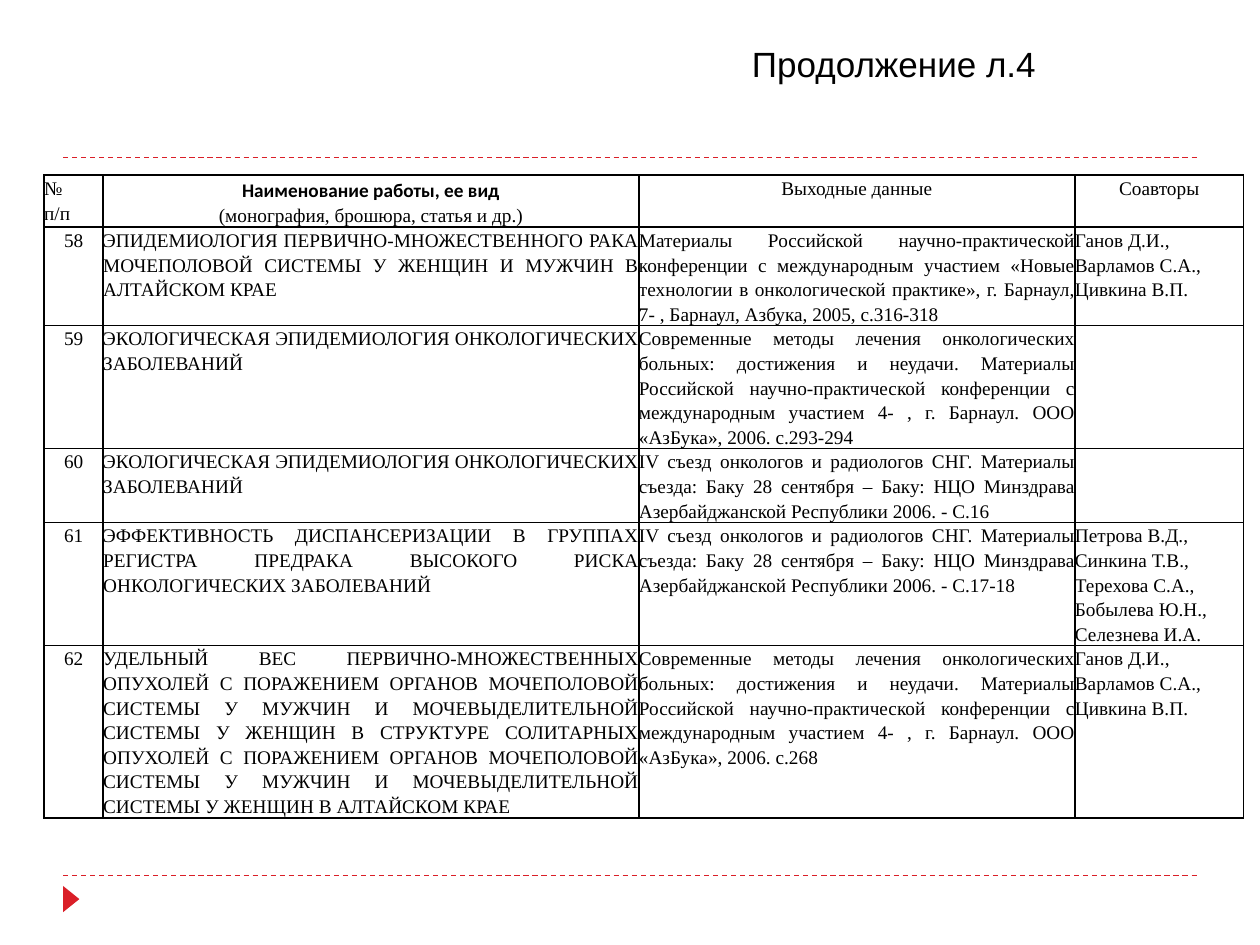
from dataclasses import dataclass
from typing import Any

import lxml.etree
import pptx
import pptx.dml.color
import pptx.enum.dml
import pptx.enum.shapes
import pptx.enum.text
import pptx.oxml.ns
import pptx.util

Cm = pptx.util.Cm
Pt = pptx.util.Pt
Align = pptx.enum.text.PP_ALIGN
qn = pptx.oxml.ns.qn

BLACK = pptx.dml.color.RGBColor(0x00, 0x00, 0x00)
RED = pptx.dml.color.RGBColor(0xDA, 0x1F, 0x28)

SERIF = {"name": "Times New Roman", "size": Pt(11), "bold": False}
STRONG = {"name": "Calibri", "size": Pt(11), "bold": True}
HEADING = {"name": "Arial", "size": Pt(20), "bold": False}
NO_MARGINS = {f"margin_{side}": 0 for side in ("left", "right", "top", "bottom")}
PLAIN_TABLE = {"first_row": False, "horz_banding": False}

COLUMN_WIDTHS = (1.19, 10.8, 8.79, 3.4)
HEADER_HEIGHT = 1.03
HEADER_ALIGNS = (Align.LEFT, Align.CENTER, Align.CENTER, Align.CENTER)
BODY_ALIGNS = (Align.CENTER, Align.JUSTIFY, Align.JUSTIFY, Align.LEFT)
HEADERS = (
    "№\nп/п",
    "Наименование работы, ее вид\n(монография, брошюра, статья и др.)",
    "Выходные данные",
    "Соавторы",
)

ECOLOGY = "ЭКОЛОГИЧЕСКАЯ ЭПИДЕМИОЛОГИЯ ОНКОЛОГИЧЕСКИХ ЗАБОЛЕВАНИЙ"
CONGRESS = (
    "IV съезд онкологов и радиологов СНГ. Материалы съезда: Баку 28 сентября – "
    "Баку: НЦО Минздрава Азербайджанской Республики 2006. - "
)
METHODS = (
    "Современные методы лечения онкологических больных: достижения и неудачи. "
    "Материалы Российской научно-практической конференции с международным "
    "участием 4- , г. Барнаул. ООО «АзБука», 2006. "
)
GANOV_GROUP = "Ганов Д.И., Варламов С.А., Цивкина В.П."


@dataclass(frozen=True)
class Work:
    number: int
    title: str
    output: str
    coauthors: str
    height: float


WORKS = (
    Work(
        58,
        "ЭПИДЕМИОЛОГИЯ ПЕРВИЧНО-МНОЖЕСТВЕННОГО РАКА МОЧЕПОЛОВОЙ СИСТЕМЫ "
        "У ЖЕНЩИН И МУЖЧИН В АЛТАЙСКОМ КРАЕ",
        "Материалы Российской научно-практической конференции с международным "
        "участием «Новые технологии в онкологической практике», г. Барнаул, 7- , "
        "Барнаул, Азбука, 2005, с.316-318",
        GANOV_GROUP,
        1.98,
    ),
    Work(59, ECOLOGY, METHODS + "с.293-294", "", 2.48),
    Work(60, ECOLOGY, CONGRESS + "С.16", "", 1.49),
    Work(
        61,
        "ЭФФЕКТИВНОСТЬ ДИСПАНСЕРИЗАЦИИ В ГРУППАХ РЕГИСТРА ПРЕДРАКА ВЫСОКОГО "
        "РИСКА ОНКОЛОГИЧЕСКИХ ЗАБОЛЕВАНИЙ",
        CONGRESS + "С.17-18",
        "Петрова В.Д., Синкина Т.В., Терехова С.А., Бобылева Ю.Н., Селезнева И.А.",
        2.48,
    ),
    Work(
        62,
        "УДЕЛЬНЫЙ ВЕС ПЕРВИЧНО-МНОЖЕСТВЕННЫХ ОПУХОЛЕЙ С ПОРАЖЕНИЕМ ОРГАНОВ "
        "МОЧЕПОЛОВОЙ СИСТЕМЫ У МУЖЧИН И МОЧЕВЫДЕЛИТЕЛЬНОЙ СИСТЕМЫ У ЖЕНЩИН "
        "В СТРУКТУРЕ СОЛИТАРНЫХ ОПУХОЛЕЙ С ПОРАЖЕНИЕМ ОРГАНОВ МОЧЕПОЛОВОЙ "
        "СИСТЕМЫ У МУЖЧИН И МОЧЕВЫДЕЛИТЕЛЬНОЙ СИСТЕМЫ У ЖЕНЩИН В АЛТАЙСКОМ КРАЕ",
        METHODS + "с.268",
        GANOV_GROUP,
        3.48,
    ),
)


def apply_values(target: Any, values: dict[str, Any]) -> None:
    for name, value in values.items():
        setattr(target, name, value)


def add_span(para: Any, text: str, style: dict[str, Any]) -> None:
    span = para.add_run()
    span.text = text
    apply_values(span.font, style)
    span.font.color.rgb = BLACK


def draw_borders(cell: Any) -> None:
    properties = cell._tc.get_or_add_tcPr()
    for side in ("L", "R", "T", "B"):
        border = lxml.etree.SubElement(properties, qn(f"a:ln{side}"), w=str(Pt(1)))
        fill = lxml.etree.SubElement(border, qn("a:solidFill"))
        lxml.etree.SubElement(fill, qn("a:srgbClr"), val=str(BLACK))


def fill_cell(cell: Any, text: str, align: Any, first_style: dict[str, Any]) -> None:
    apply_values(cell, NO_MARGINS)
    draw_borders(cell)
    cell.fill.background()
    for index, line in enumerate(text.split("\n")):
        para = cell.text_frame.add_paragraph() if index else cell.text_frame.paragraphs[0]
        apply_values(para, {"alignment": align, "line_spacing": 1.15})
        if line:
            add_span(para, line, SERIF if index else first_style)
        else:
            apply_values(para.font, SERIF)


def add_works_table(page: Any) -> None:
    heights = (HEADER_HEIGHT, *(work.height for work in WORKS))
    table = page.shapes.add_table(
        len(heights), len(COLUMN_WIDTHS), Cm(0.89), Cm(3.53),
        Cm(sum(COLUMN_WIDTHS)), Cm(sum(heights)),
    ).table
    apply_values(table, PLAIN_TABLE)
    for column, width in zip(table.columns, COLUMN_WIDTHS):
        column.width = Cm(width)
    for row, height in zip(table.rows, heights):
        row.height = Cm(height)
    for index, (text, align) in enumerate(zip(HEADERS, HEADER_ALIGNS)):
        fill_cell(table.cell(0, index), text, align, STRONG if index == 1 else SERIF)
    for row_index, work in enumerate(WORKS, 1):
        texts = (str(work.number), work.title, work.output, work.coauthors)
        for index, (text, align) in enumerate(zip(texts, BODY_ALIGNS)):
            fill_cell(table.cell(row_index, index), text, align, SERIF)


def add_dashed_rule(page: Any, top: float) -> None:
    rule = page.shapes.add_connector(
        pptx.enum.shapes.MSO_CONNECTOR.STRAIGHT, Cm(1.27), Cm(top), Cm(24.13), Cm(top)
    )
    rule.line.color.rgb = RED
    apply_values(
        rule.line,
        {"width": Pt(0.75), "dash_style": pptx.enum.dml.MSO_LINE.DASH},
    )
    lxml.etree.SubElement(rule._element.spPr, qn("a:effectLst"))


def add_marker(page: Any) -> None:
    marker = page.shapes.add_shape(
        pptx.enum.shapes.MSO_SHAPE.ISOSCELES_TRIANGLE,
        Cm(1.17), Cm(17.96), Cm(0.53), Cm(0.33),
    )
    marker.rotation = 90
    marker.shadow.inherit = False
    marker.fill.solid()
    marker.fill.fore_color.rgb = RED
    marker.line.fill.background()


def add_heading(page: Any) -> None:
    box = page.shapes.add_textbox(Cm(14.91), Cm(0.74), Cm(10.49), Cm(1.11))
    box.text_frame.word_wrap = True
    add_span(box.text_frame.paragraphs[0], "Продолжение л.4", HEADING)


def main() -> None:
    deck = pptx.Presentation()
    apply_values(deck, {"slide_width": Cm(25.4), "slide_height": Cm(19.05)})
    page = deck.slides.add_slide(deck.slide_layouts[6])
    for top in (17.65, 3.18):
        add_dashed_rule(page, top)
    add_marker(page)
    add_works_table(page)
    add_heading(page)
    deck.save("out.pptx")


if __name__ == "__main__":
    main()
